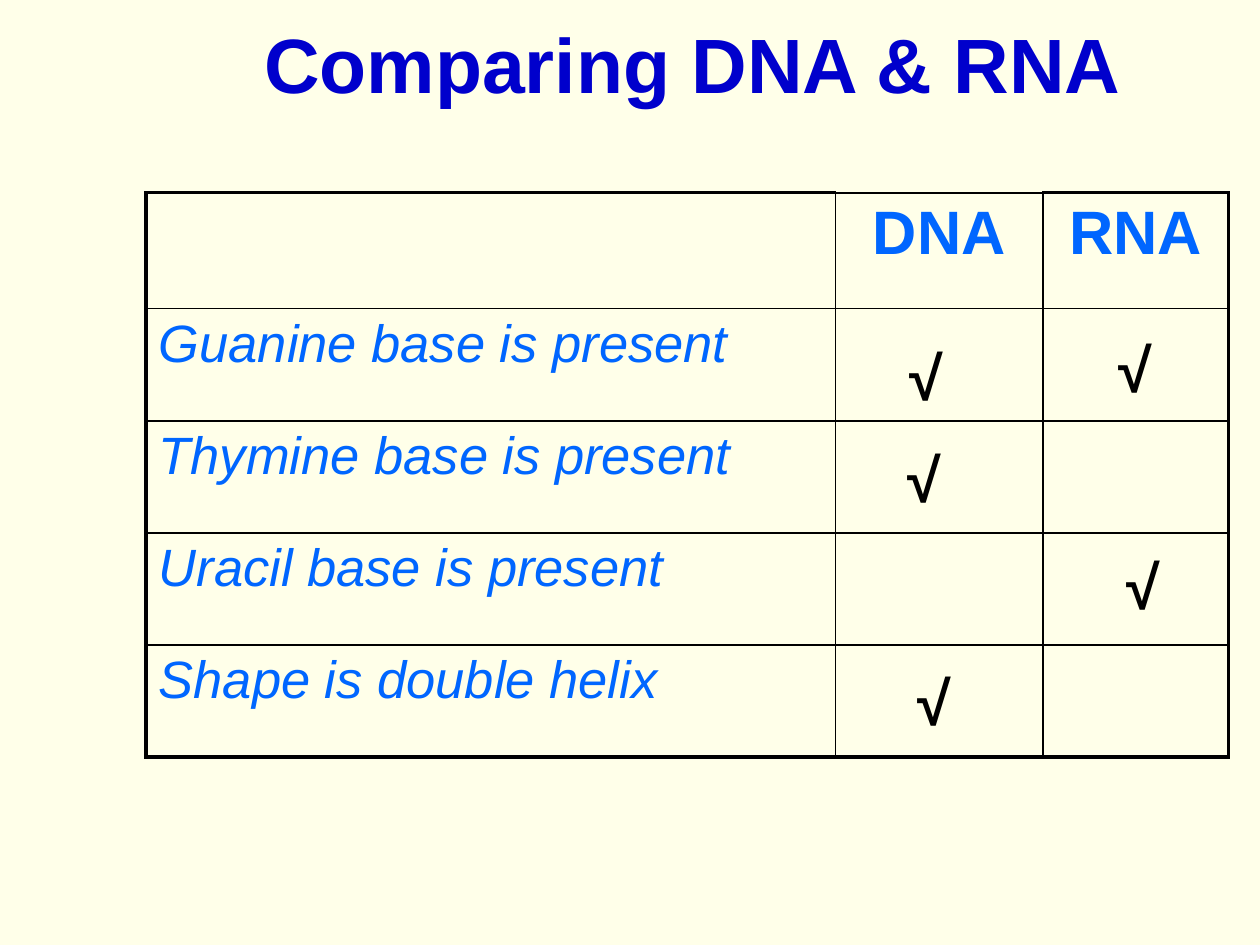
from collections import namedtuple
from dataclasses import dataclass

from lxml.etree import SubElement
from pptx import Presentation
from pptx.dml.color import RGBColor
from pptx.enum.text import MSO_ANCHOR, PP_ALIGN
from pptx.oxml.ns import qn
from pptx.util import Pt

PX = 9144  # 100 px to the inch
Box = namedtuple("Box", "left top width height")


@dataclass(frozen=True)
class Theme:
    font: str = "Arial"
    background: str = "FFFFE9"
    title: str = "0000CC"
    label: str = "0066FF"
    ink: str = "000000"
    title_size: int = 44
    head_size: int = 35
    label_size: int = 30
    inner_line: float = 1
    outer_line: float = 2.25


THEME = Theme()
TITLE_BOX = Box(100, 12, 900, 75)
TABLE_BOX = Box(116, 153, 859, 448)
COLUMN_WIDTHS = (547, 165, 147)
ROW_HEIGHTS = (92, 89, 89, 89, 89)
HEADINGS = ("", "DNA", "RNA")
FEATURES = (
    "Guanine base is present",
    "Thymine base is present",
    "Uracil base is present",
    "Shape is double helix",
)
# Left and top of each tick, measured from the table's corner
TICKS = ((596, 111), (762, 105), (594, 192), (768, 277), (602, 369))
TICK_SIZE = (58, 68)


def emu(box):
    return [length * PX for length in box]


def write(frame, text, *, size, color, bold=False, italic=False, align=PP_ALIGN.LEFT):
    para = frame.paragraphs[0]
    para.alignment = align
    span = para.add_run()
    span.text = text
    font = span.font
    font.name, font.size = THEME.font, Pt(size)
    font.bold, font.italic = bold, italic
    font.color.rgb = RGBColor.from_string(color)


def add_text(page, box, text, anchor=MSO_ANCHOR.TOP, **style):
    frame = page.shapes.add_textbox(*emu(box)).text_frame
    frame.word_wrap = True
    frame.vertical_anchor = anchor
    write(frame, text, **style)


def set_border(cell, side, width):
    """Draw one cell edge; side is L, R, T or B, in that order."""
    properties = cell._tc.get_or_add_tcPr()
    line = SubElement(properties, qn(f"a:ln{side}"), w=str(Pt(width)))
    fill = SubElement(line, qn("a:solidFill"))
    SubElement(fill, qn("a:srgbClr"), val=THEME.ink)


def style_cell(cell, row, column):
    """Give the cell no fill, and heavier lines where it meets the outer frame."""
    outer = {
        "L": column == 0,
        "R": column == len(COLUMN_WIDTHS) - 1,
        "T": row == 0 and column != 1,
        "B": row == len(ROW_HEIGHTS) - 1,
    }
    for side, is_outer in outer.items():
        set_border(cell, side, THEME.outer_line if is_outer else THEME.inner_line)
    cell.fill.background()


def add_comparison(page, box):
    table = page.shapes.add_table(len(ROW_HEIGHTS), len(COLUMN_WIDTHS), *emu(box)).table
    table.first_row = table.horz_banding = False
    for column, width in zip(table.columns, COLUMN_WIDTHS):
        column.width = width * PX
    for row, height in zip(table.rows, ROW_HEIGHTS):
        row.height = height * PX
    for row in range(len(ROW_HEIGHTS)):
        for column in range(len(COLUMN_WIDTHS)):
            style_cell(table.cell(row, column), row, column)

    for column, heading in enumerate(HEADINGS):
        if heading:
            write(table.cell(0, column).text_frame, heading, size=THEME.head_size,
                  color=THEME.label, bold=True, align=PP_ALIGN.CENTER)
    for row, feature in enumerate(FEATURES, start=1):
        write(table.cell(row, 0).text_frame, feature, size=THEME.label_size,
              color=THEME.label, italic=True)


def add_ticks(page, box):
    for left, top in TICKS:
        add_text(page, Box(box.left + left, box.top + top, *TICK_SIZE), "√",
                 size=THEME.head_size, color=THEME.ink, bold=True)


def add_title(page, box):
    add_text(page, box, "Comparing DNA & RNA", anchor=MSO_ANCHOR.MIDDLE,
             size=THEME.title_size, color=THEME.title, bold=True, align=PP_ALIGN.CENTER)


def main():
    deck = Presentation()
    deck.slide_width, deck.slide_height = 1000 * PX, 750 * PX
    page = deck.slides.add_slide(deck.slide_layouts[6])
    page.background.fill.solid()
    page.background.fill.fore_color.rgb = RGBColor.from_string(THEME.background)
    add_comparison(page, TABLE_BOX)
    add_ticks(page, TABLE_BOX)
    add_title(page, TITLE_BOX)
    deck.save("out.pptx")


if __name__ == "__main__":
    main()
